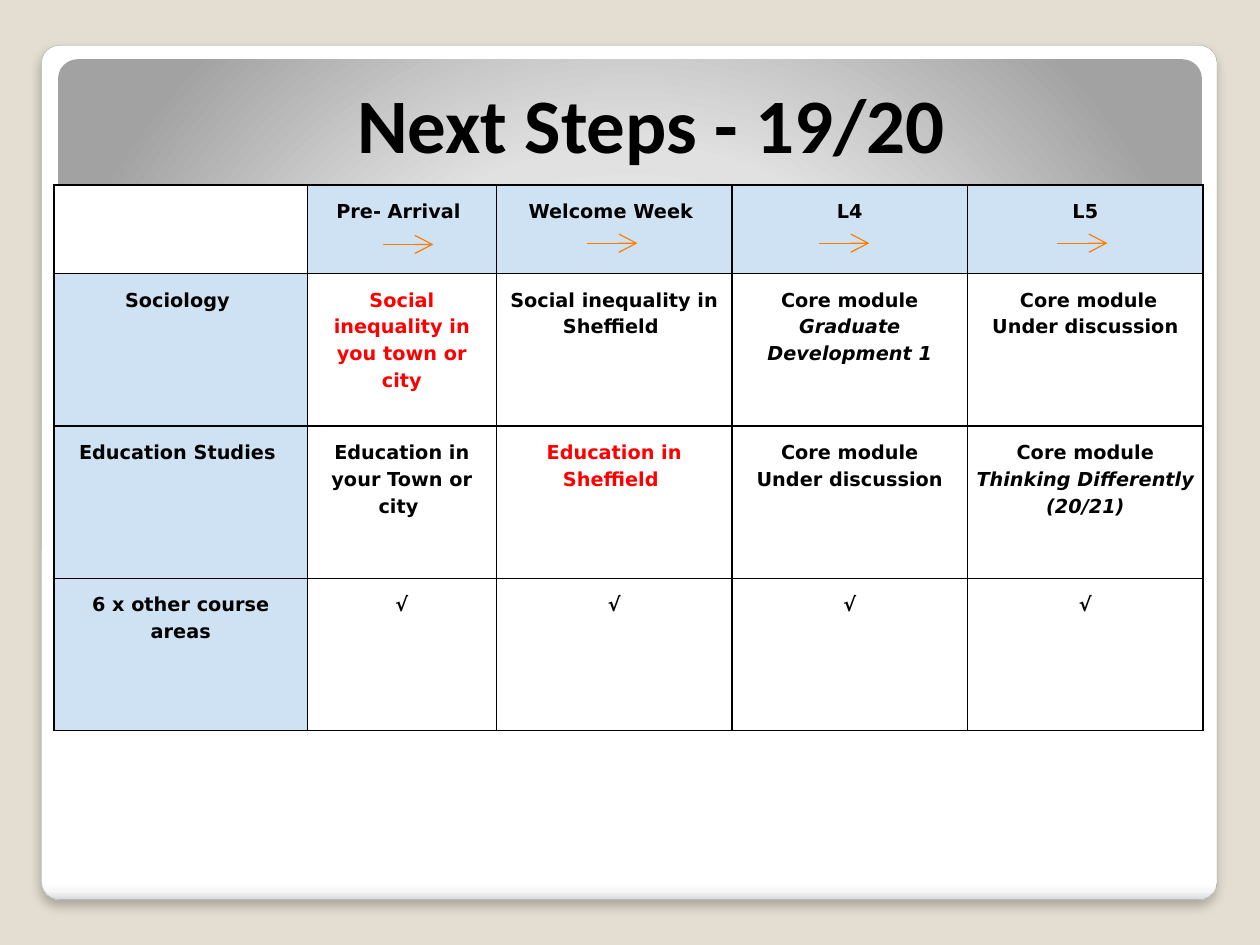
from lxml import etree
from pptx import Presentation
from pptx.dml.color import RGBColor
from pptx.enum.shapes import MSO_CONNECTOR, MSO_SHAPE
from pptx.enum.text import MSO_ANCHOR, PP_ALIGN
from pptx.oxml.ns import qn
from pptx.util import Inches, Pt

ROUND = MSO_SHAPE.ROUNDED_RECTANGLE
STRAIGHT = MSO_CONNECTOR.STRAIGHT
CENTER = PP_ALIGN.CENTER
TOP = MSO_ANCHOR.TOP

BEIGE = RGBColor(0xE3, 0xDE, 0xD1)
GRAY = RGBColor(0xA4, 0xA4, 0xA4)
WHITE = RGBColor(0xFF, 0xFF, 0xFF)
BLACK = RGBColor(0x00, 0x00, 0x00)
RED = RGBColor(0xFF, 0x00, 0x00)
BLUE = RGBColor(0xCF, 0xE2, 0xF3)
ORANGE = RGBColor(0xF9, 0x7F, 0x00)

COLS = [2.01, 1.5, 1.87, 1.87, 1.87]
ROWS = [0.7, 1.21, 1.21, 1.21]
CELLS = [
    ["", "Pre- Arrival ", "Welcome Week ", "L4", "L5"],
    ["Sociology ", "Social inequality in you town or city",
     "Social inequality in Sheffield ",
     "Core module\nGraduate Development 1",
     " Core module\nUnder discussion"],
    ["Education Studies ", "Education in your Town or city ",
     "Education in Sheffield ", "Core module\nUnder discussion",
     "Core module\nThinking Differently (20/21)"],
    ["6 x other course areas", "√", "√", "√", "√"],
]
REDS = {(1, 1), (2, 2)}
ITALICS = {(1, 3), (2, 4)}
ARROWS = [(3.04, 1.94), (4.66, 1.93), (6.5, 1.93), (8.39, 1.93)]


def add_xml(parent, tag, **attrs):
    node = etree.SubElement(parent, qn(tag))
    for key, value in attrs.items():
        node.set(key, str(value))
    return node


def add_panel(slide, box, adj, stops):
    panel = slide.shapes.add_shape(ROUND, *map(Inches, box))
    panel.adjustments[0] = adj
    panel.shadow.inherit = False
    panel.line.fill.background()
    grad = etree.Element(qn("a:gradFill"), rotWithShape="1")
    stop_list = add_xml(grad, "a:gsLst")
    for place, color in stops:
        stop = add_xml(stop_list, "a:gs", pos=place * 1000)
        add_xml(stop, "a:srgbClr", val=color)
    panel.element.spPr.insert(2, grad)
    return panel, grad


def add_card(slide):
    card, grad = add_panel(
        slide, (0.33, 0.36, 9.33, 6.78), 0.021,
        [(0, "FFFFFF"), (98, "FFFFFF"), (99, "F7F7F7"), (100, "DADADA")])
    add_xml(grad, "a:lin", ang=5400000, scaled=0)
    card.line.color.rgb = GRAY
    card.line.width = Pt(0.16)
    effects = card.element.spPr.find(qn("a:effectLst"))
    shadow = add_xml(effects, "a:outerShdw", blurRad=Pt(6), dist=Pt(4),
                     dir=5400000, algn="t", rotWithShape=0)
    add_xml(add_xml(shadow, "a:srgbClr", val="000000"), "a:alpha", val=25000)


def add_banner(slide):
    grad = add_panel(slide, (0.46, 0.47, 9.08, 3.4), 0.046,
                     [(0, "FFFFFF"), (55, "E1E1E1"), (100, "A2A2A2")])[1]
    circle = add_xml(grad, "a:path", path="circle")
    add_xml(circle, "a:fillToRect", l=50000, t=175000, r=50000, b=-75000)


def style_text(frame, font, size, color):
    for para in frame.paragraphs:
        para.alignment = CENTER
        para.line_spacing = 1.2
        for run in para.runs:
            run.font.name = font
            run.font.size = Pt(size)
            run.font.bold = True
            run.font.color.rgb = color


def add_borders(cell):
    props = cell._tc.get_or_add_tcPr()
    for side in ("a:lnL", "a:lnR", "a:lnT", "a:lnB"):
        line = add_xml(props, side, w=Pt(1))
        add_xml(add_xml(line, "a:solidFill"), "a:srgbClr", val=BLACK)


def fill_cell(cell, row, col):
    add_borders(cell)
    cell.margin_left = cell.margin_right = Inches(0.07)
    cell.margin_top = cell.margin_bottom = Inches(0.09)
    cell.vertical_anchor = TOP
    cell.fill.solid()
    cell.fill.fore_color.rgb = BLUE if (row == 0) != (col == 0) else WHITE
    frame = cell.text_frame
    frame.text = CELLS[row][col]
    style_text(frame, "DejaVu Sans", 11, RED if (row, col) in REDS else BLACK)
    if (row, col) in ITALICS:
        frame.paragraphs[1].runs[0].font.italic = True


def add_plan(slide):
    table = slide.shapes.add_table(
        len(ROWS), len(COLS), Inches(0.43), Inches(1.47),
        Inches(sum(COLS)), Inches(sum(ROWS))).table
    for col, width in enumerate(COLS):
        table.columns[col].width = Inches(width)
    for row, height in enumerate(ROWS):
        table.rows[row].height = Inches(height)
        for col in range(len(COLS)):
            fill_cell(table.cell(row, col), row, col)


def add_title(slide):
    box = slide.shapes.add_textbox(
        Inches(2.17), Inches(0.36), Inches(6), Inches(1.08))
    frame = box.text_frame
    frame.word_wrap = True
    frame.margin_left = frame.margin_right = Inches(0.1)
    frame.margin_top = frame.margin_bottom = Inches(0.1)
    frame.text = "Next Steps - 19/20"
    style_text(frame, "Calibri", 44, BLACK)


def add_arrow(slide, left, top):
    arrow = slide.shapes.add_connector(
        STRAIGHT, Inches(left), Inches(top), Inches(left + 0.4), Inches(top))
    arrow.line.color.rgb = ORANGE
    arrow.line.width = Pt(0.75)
    add_xml(arrow.line._get_or_add_ln(), "a:tailEnd", type="arrow",
            w="lg", len="lg")
    add_xml(arrow.element.spPr, "a:effectLst")


def main():
    deck = Presentation()
    deck.slide_width = Inches(10)
    deck.slide_height = Inches(7.5)
    slide = deck.slides.add_slide(deck.slide_layouts[6])
    slide.background.fill.solid()
    slide.background.fill.fore_color.rgb = BEIGE
    add_card(slide)
    add_banner(slide)
    add_plan(slide)
    add_title(slide)
    for left, top in ARROWS:
        add_arrow(slide, left, top)
    deck.save("out.pptx")


if __name__ == "__main__":
    main()
